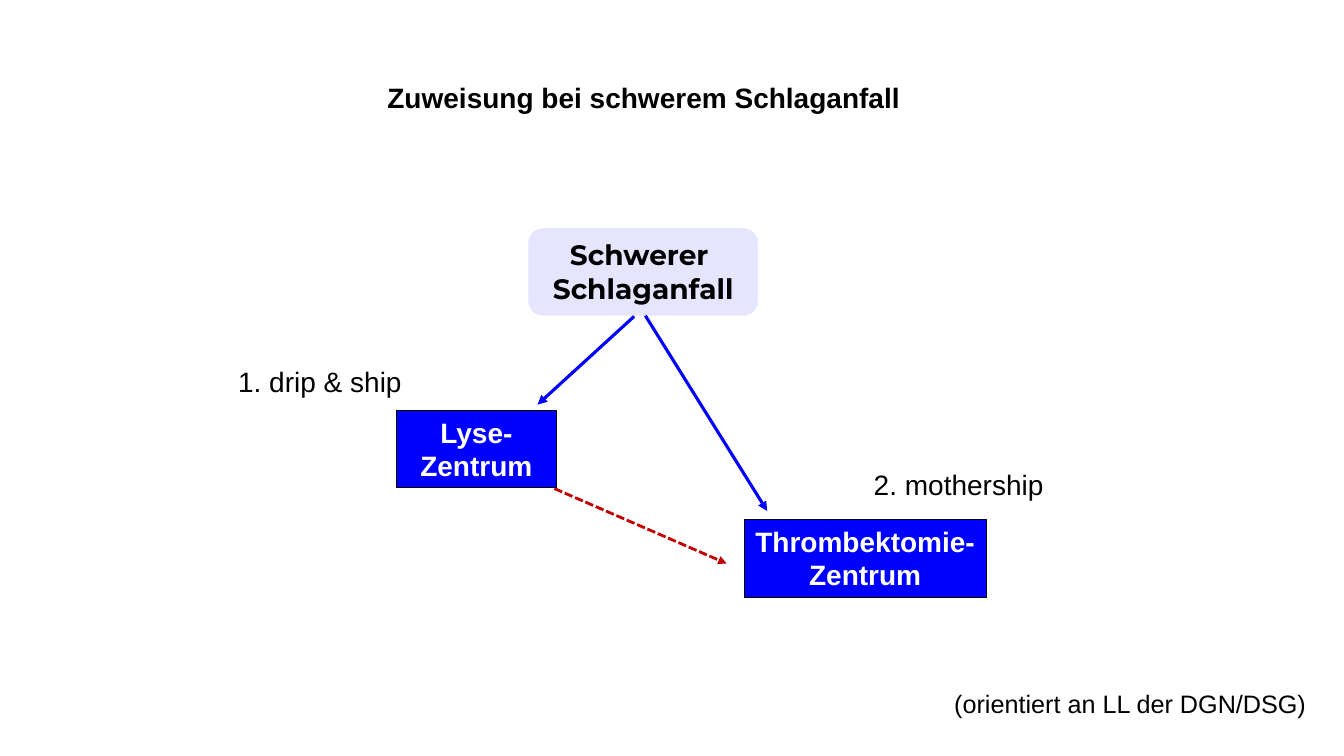
from lxml import etree
from pptx import Presentation
from pptx.dml.color import RGBColor
from pptx.enum.dml import MSO_LINE
from pptx.enum.shapes import MSO_CONNECTOR, MSO_SHAPE
from pptx.enum.text import MSO_ANCHOR, PP_ALIGN
from pptx.oxml.ns import qn
from pptx.util import Pt

RECT, ROUND = MSO_SHAPE.RECTANGLE, MSO_SHAPE.ROUNDED_RECTANGLE
LEFT, CENTER = PP_ALIGN.LEFT, PP_ALIGN.CENTER
TOP = MSO_ANCHOR.TOP
STRAIGHT = MSO_CONNECTOR.STRAIGHT
DASH = MSO_LINE.SQUARE_DOT
BLUE, RED, BLACK, WHITE = "0000FF", "C00000", "000000", "FFFFFF"


def paint(target, color):
    """Set a solid colour on a fill."""
    target.solid()
    target.fore_color.rgb = RGBColor.from_string(color)


def write(shape, text, color=BLACK, size=20, bold=False, align=LEFT,
          font="Arial", wrap=False):
    frame = shape.text_frame
    frame.text = text
    frame.word_wrap = wrap
    frame.vertical_anchor = TOP
    for para in frame.paragraphs:
        para.alignment = align
        for run in para.runs:
            run.font.name = font
            run.font.size = Pt(size)
            run.font.bold = bold
            paint(run.font.fill, color)


def label(slide, box, text, size=20):
    write(slide.shapes.add_textbox(*map(Pt, box)), text, size=size)


def node(slide, kind, box):
    shape = slide.shapes.add_shape(kind, *map(Pt, box))
    shape.shadow.inherit = False
    paint(shape.fill, BLUE)
    return shape


def center(slide, box, text, wrap=False):
    """Draw a blue box for a treatment centre."""
    shape = node(slide, RECT, box)
    paint(shape.line.fill, BLACK)
    shape.line.width = Pt(0.75)
    write(shape, text, WHITE, bold=True, align=CENTER, wrap=wrap)


def start(slide, box):
    """Draw the pale box where the paths begin."""
    shape = node(slide, ROUND, box)
    tint = shape.fill._xPr.find(".//" + qn("a:srgbClr"))
    etree.SubElement(tint, qn("a:alpha"), val="10000")
    shape.line.fill.background()
    write(shape, "Schwerer \vSchlaganfall", bold=True, align=CENTER,
          font="Montserrat")


def arrow(slide, ends, color=BLUE, width=2.25, dash=None):
    link = slide.shapes.add_connector(STRAIGHT, *map(Pt, ends))
    paint(link.line.fill, color)
    link.line.width = Pt(width)
    if dash:
        link.line.dash_style = dash
    etree.SubElement(link.line._get_or_add_ln(), qn("a:tailEnd"),
                     type="triangle")
    etree.SubElement(link._element.spPr, qn("a:effectLst"))


def heading(slide, box):
    title = slide.shapes.title
    title.left, title.top, title.width, title.height = map(Pt, box)
    write(title, "Zuweisung bei schwerem Schlaganfall", bold=True)


def paths(slide, left, top):
    """Draw the two referral paths from the given corner."""
    def at(x, y, *size):
        return (left + x, top + y, *size)

    def span(x1, y1, x2, y2):
        return at(x1, y1) + at(x2, y2)

    center(slide, at(368.5, 208, 173, 55.5), "Thrombektomie-\nZentrum")
    arrow(slide, span(290, 63, 221, 126))
    arrow(slide, span(298, 62.5, 385, 202))
    arrow(slide, span(233, 186, 356, 239.5), RED, 2, DASH)
    center(slide, at(120, 130, 114.5, 55.5), "Lyse-Zentrum", wrap=True)
    start(slide, at(214.5, 0, 164, 62.5))
    label(slide, at(0, 94, 132.5, 31.5), "1. drip & ship")
    label(slide, at(454, 167.5, 137, 31.5), "2. mothership")


def main():
    deck = Presentation()
    deck.slide_width, deck.slide_height = Pt(960), Pt(540)
    slide = deck.slides.add_slide(deck.slide_layouts[5])
    heading(slide, (269.5, 54, 384, 31.5))
    paths(slide, 163, 163)
    label(slide, (674.5, 488, 268.5, 29), "(orientiert an LL der DGN/DSG)", 18)
    deck.save("out.pptx")


if __name__ == "__main__":
    main()
